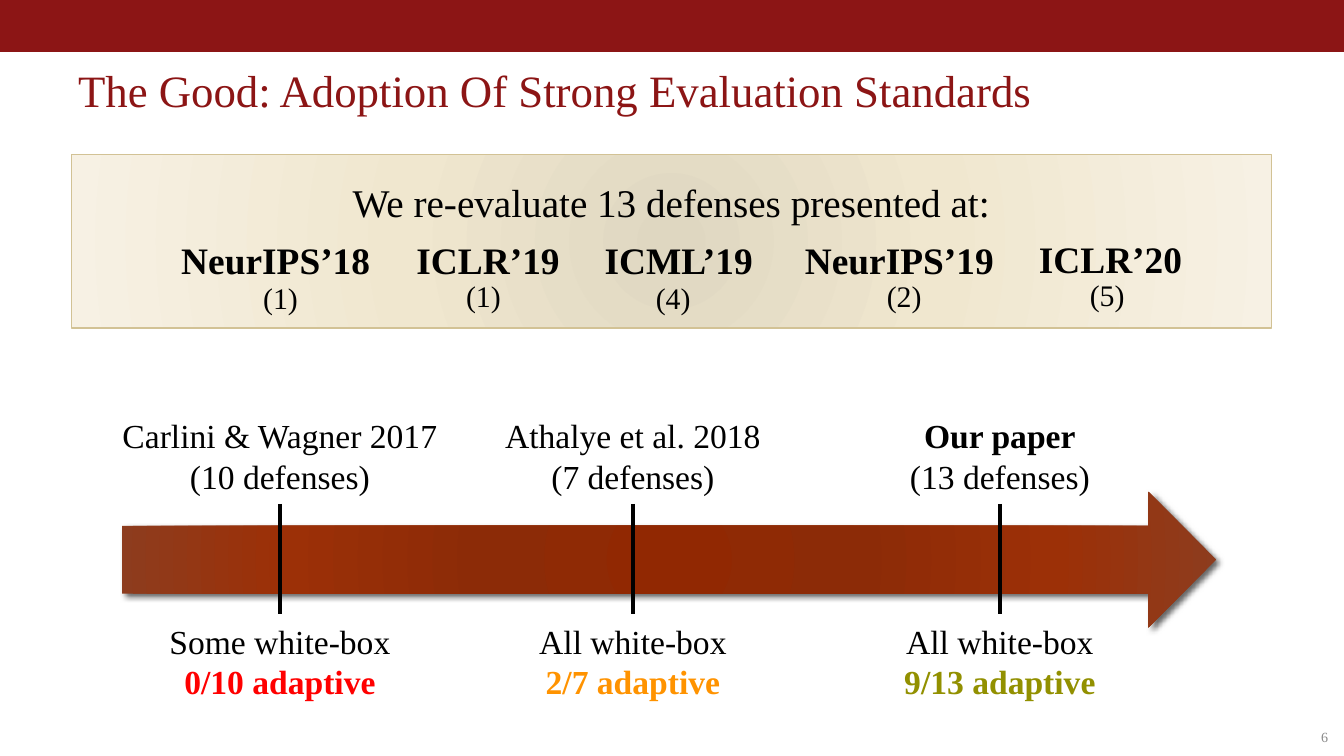
from lxml.etree import SubElement
from pptx import Presentation
from pptx.dml.color import RGBColor
from pptx.enum.shapes import MSO_CONNECTOR, MSO_SHAPE
from pptx.enum.text import MSO_ANCHOR, MSO_AUTO_SIZE, PP_ALIGN
from pptx.oxml.ns import qn
from pptx.util import Pt

FONT = "Times New Roman"
BLACK = RGBColor(0x00, 0x00, 0x00)
CARDINAL = RGBColor(0x8C, 0x15, 0x15)
GRAY = RGBColor(0x89, 0x89, 0x89)
SAND = RGBColor(0xD2, 0xC2, 0x95)
RED = RGBColor(0xFF, 0x00, 0x00)
ORANGE = RGBColor(0xFF, 0x93, 0x00)
OLIVE = RGBColor(0x92, 0x90, 0x00)
PANEL_STOPS = [
    (0, RGBColor(0xDF, 0xD7, 0xC1)),
    (45, RGBColor(0xF0, 0xE7, 0xCF)),
    (100, RGBColor(0xF7, 0xF1, 0xE4)),
]
ARROW_STOPS = [
    (0, RGBColor(0x91, 0x28, 0x02)),
    (34, RGBColor(0x8C, 0x2B, 0x07)),
    (70, RGBColor(0x9C, 0x30, 0x07)),
    (100, RGBColor(0x8D, 0x3C, 0x1E)),
]

TITLE = "The Good: Adoption Of Strong Evaluation Standards"
INTRO = "We re-evaluate 13 defenses presented at:"
PAGE_NUMBER = "6"
VENUES = [
    ("NeurIPS’18", 90, 123.8, 116.6, "(1)", 133.9, 146.2),
    ("ICLR’19", 216, 123.8, 92.2, "(1)", 242.6, 145.4),
    ("ICML’19", 316.8, 123.5, 94.3, "(4)", 344.2, 146.2),
    ("NeurIPS’19", 424.1, 123.5, 116.6, "(2)", 468, 145.4),
    ("ICLR’20", 549.4, 123.1, 92.2, "(5)", 576.7, 144.7),
]
MILESTONES = [
    {"center": 150, "study": "Carlini & Wagner 2017", "bold": False, "count": "(10 defenses)",
     "access": "Some white-box", "adaptive": "0/10 adaptive", "color": RED,
     "top_width": 185, "bottom_width": 172.8},
    {"center": 339.1, "study": "Athalye et al. 2018", "bold": False, "count": "(7 defenses)",
     "access": "All white-box", "adaptive": "2/7 adaptive", "color": ORANGE,
     "top_width": 152.6, "bottom_width": 157},
    {"center": 535.7, "study": "Our paper", "bold": True, "count": "(13 defenses)",
     "access": "All white-box", "adaptive": "9/13 adaptive", "color": OLIVE,
     "top_width": 112.3, "bottom_width": 211.7},
]
TICK_TOP, TICK_BOTTOM = 270, 329
LABEL_HEIGHT = 51.1


def add_text(slide, box, lines, size, alignment=PP_ALIGN.LEFT, spacing=1.0, **frame_format):
    frame = slide.shapes.add_textbox(*map(Pt, box)).text_frame
    for name, value in {"word_wrap": True, **frame_format}.items():
        setattr(frame, name, value)
    for index, (text, color, bold) in enumerate(lines):
        paragraph = frame.paragraphs[0] if index == 0 else frame.add_paragraph()
        paragraph.alignment = alignment
        paragraph.line_spacing = spacing
        run = paragraph.add_run()
        run.text = text
        run.font.color.rgb = color
        for name, value in {"name": FONT, "size": Pt(size), "bold": bold}.items():
            setattr(run.font, name, value)


def add_block(slide, preset, box, fill=None, line=None):
    shape = slide.shapes.add_shape(preset, *map(Pt, box))
    shape.shadow.inherit = False
    if fill is not None:
        shape.fill.solid()
        shape.fill.fore_color.rgb = fill
    if line is None:
        shape.line.fill.background()
    else:
        shape.line.color.rgb = line
        shape.line.width = Pt(0.75)
    return shape


def set_radial_fill(shape, stops):
    shape.fill.gradient()
    gradient = shape._element.spPr.find(qn("a:gradFill"))
    for child in list(gradient):
        gradient.remove(child)
    stop_list = SubElement(gradient, qn("a:gsLst"))
    for position, color in stops:
        stop = SubElement(stop_list, qn("a:gs"), pos=str(position * 1000))
        SubElement(stop, qn("a:srgbClr"), val=str(color))
    path = SubElement(gradient, qn("a:path"), path="circle")
    SubElement(path, qn("a:fillToRect"), l="50000", t="50000", r="50000", b="50000")


def add_shadow(shape):
    effects = shape._element.spPr.find(qn("a:effectLst"))
    shadow = SubElement(effects, qn("a:outerShdw"), blurRad=str(Pt(3)), dist=str(Pt(2)),
                        dir=str(45 * 60000), algn="tl", rotWithShape="0")
    color = SubElement(shadow, qn("a:srgbClr"), val=str(BLACK))
    SubElement(color, qn("a:alpha"), val="60000")


def add_tick(slide, center):
    tick = slide.shapes.add_connector(
        MSO_CONNECTOR.STRAIGHT, Pt(center), Pt(TICK_TOP), Pt(center), Pt(TICK_BOTTOM))
    tick.line.color.rgb = BLACK
    tick.line.width = Pt(2.08)
    SubElement(tick._element.spPr, qn("a:effectLst"))


def main():
    presentation = Presentation()
    presentation.slide_width, presentation.slide_height = Pt(720), Pt(405)
    slide = presentation.slides.add_slide(presentation.slide_layouts[6])

    add_block(slide, MSO_SHAPE.RECTANGLE, (-0.5, 0, 720.5, 27.4), CARDINAL, CARDINAL)
    panel = add_block(slide, MSO_SHAPE.RECTANGLE, (38.2, 82.8, 643, 92.9), line=SAND)
    set_radial_fill(panel, PANEL_STOPS)
    add_text(slide, (41.8, 28.1, 639.4, 38.2), [(TITLE, CARDINAL, False)], 24, spacing=0.85,
             vertical_anchor=MSO_ANCHOR.BOTTOM, margin_left=0)
    add_text(slide, (651.6, 383.8, 67, 21.6), [(PAGE_NUMBER, GRAY, False)], 7.5,
             PP_ALIGN.RIGHT, vertical_anchor=MSO_ANCHOR.MIDDLE)
    add_text(slide, (38.2, 92.2, 643, 58.3), [(INTRO, BLACK, False)], 21, PP_ALIGN.CENTER)

    hug = {"word_wrap": False, "auto_size": MSO_AUTO_SIZE.SHAPE_TO_FIT_TEXT}
    for venue, left, top, width, count, count_left, count_top in VENUES:
        add_text(slide, (left, top, width, 31.7), [(venue, BLACK, True)], 20, **hug)
        add_text(slide, (count_left, count_top, 37.4, 26.6), [(count, BLACK, False)], 16, **hug)

    arrow = add_block(slide, MSO_SHAPE.RIGHT_ARROW, (65.5, 263.5, 586.1, 72.7))
    set_radial_fill(arrow, ARROW_STOPS)
    add_shadow(arrow)
    for item in MILESTONES:
        center = item["center"]
        add_tick(slide, center)
        labels = [
            (TICK_TOP - LABEL_HEIGHT, item["top_width"], False,
             [(item["study"], BLACK, item["bold"]), (item["count"], BLACK, False)]),
            (TICK_BOTTOM, item["bottom_width"], True,
             [(item["access"], BLACK, False), (item["adaptive"], item["color"], True)]),
        ]
        for top, width, wrap, lines in labels:
            add_text(slide, (center - width / 2, top, width, LABEL_HEIGHT), lines, 18,
                     PP_ALIGN.CENTER, word_wrap=wrap, auto_size=MSO_AUTO_SIZE.SHAPE_TO_FIT_TEXT)

    presentation.save("out.pptx")


if __name__ == "__main__":
    main()
